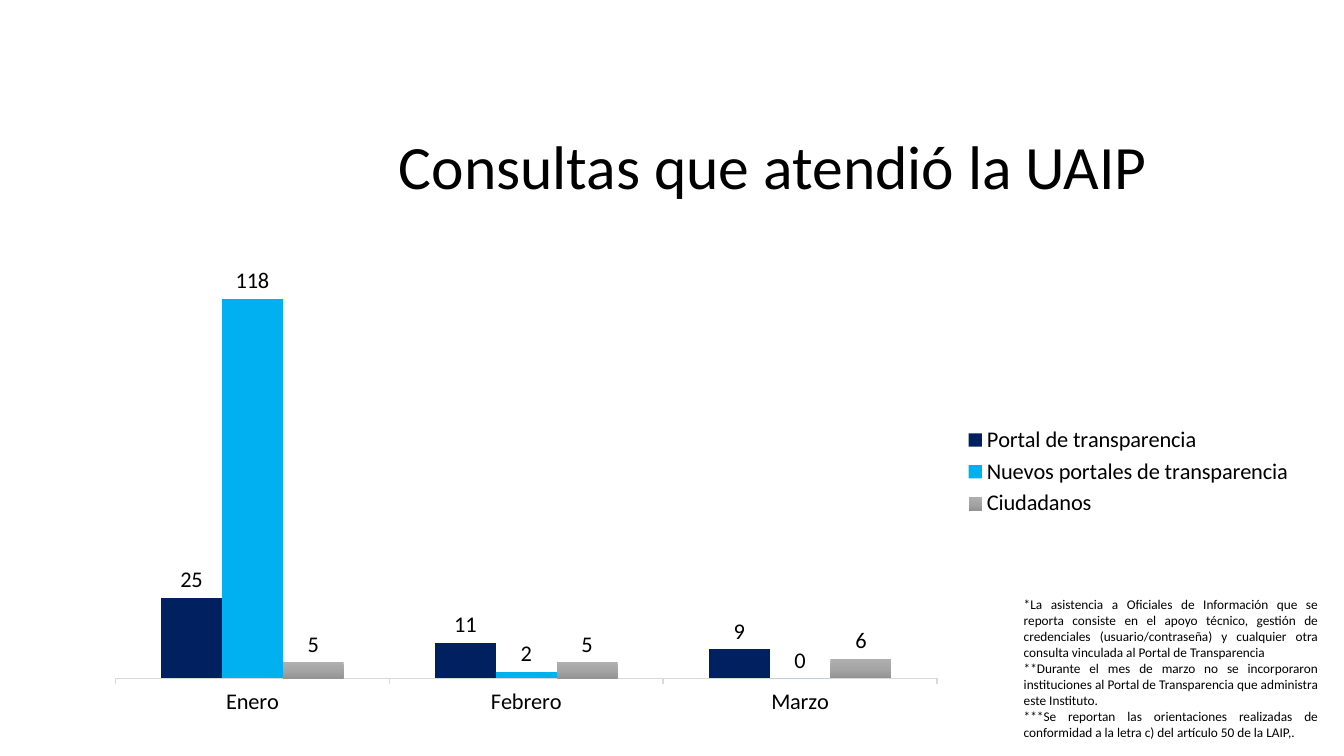
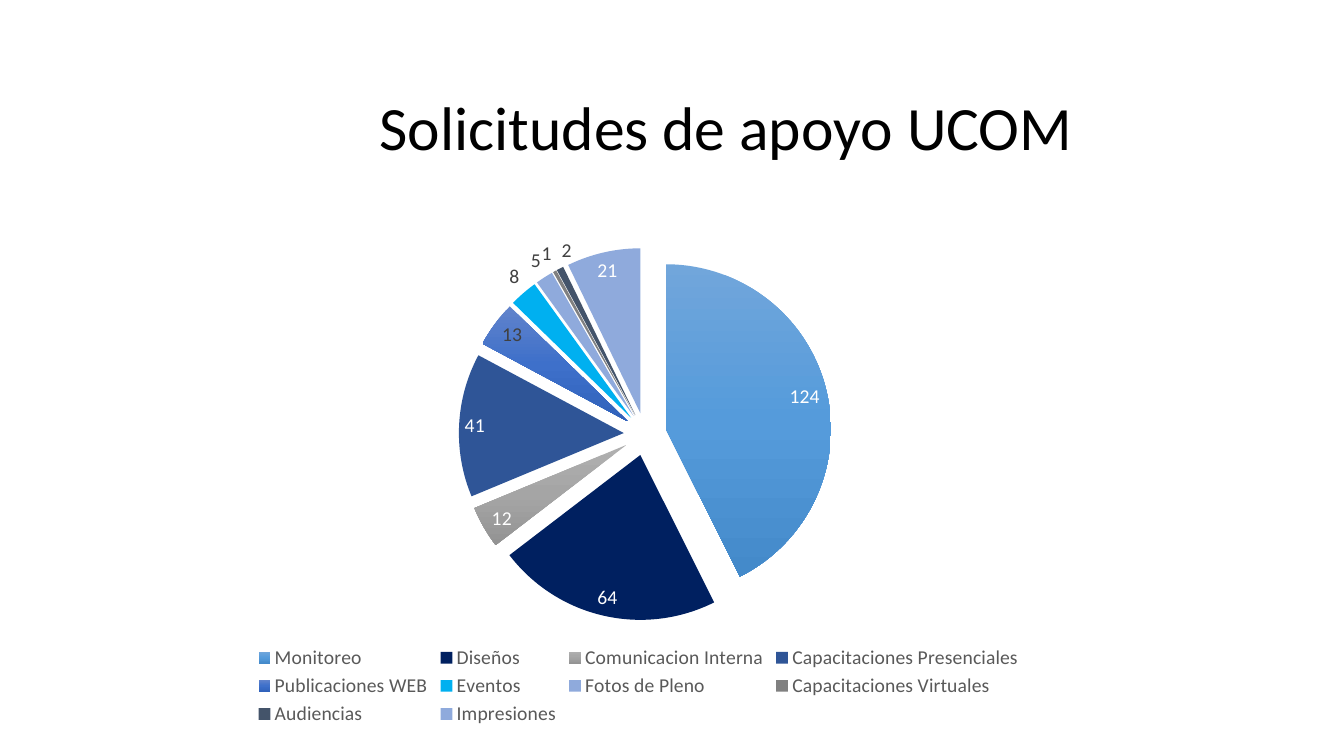
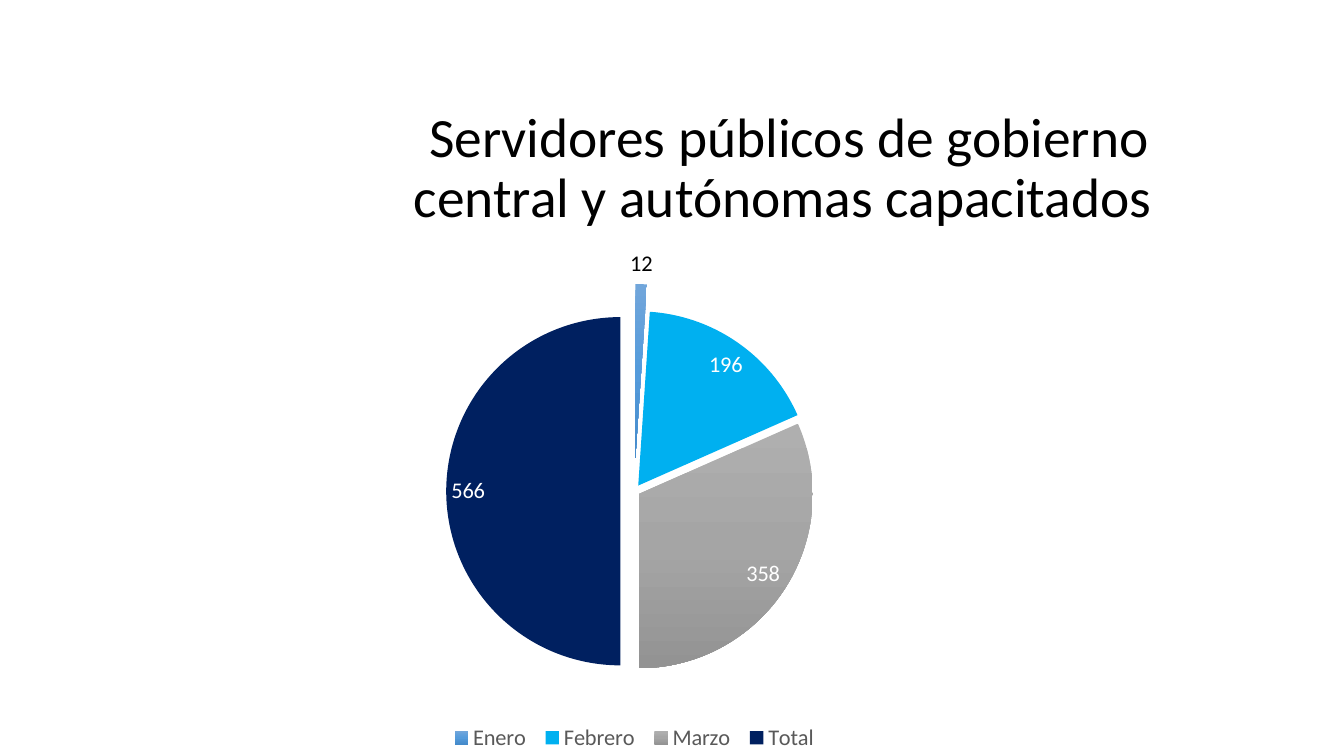
from lxml.etree import SubElement
from pptx import Presentation
from pptx.chart.data import CategoryChartData
from pptx.dml.color import RGBColor
from pptx.enum.chart import XL_CHART_TYPE, XL_LABEL_POSITION, XL_LEGEND_POSITION, XL_TICK_MARK
from pptx.enum.text import MSO_ANCHOR, PP_ALIGN
from pptx.oxml.ns import qn
from pptx.util import Cm, Pt

FONT = "Calibri"
BLACK = RGBColor(0x00, 0x00, 0x00)
WHITE = RGBColor(0xFF, 0xFF, 0xFF)
DARK_GRAY = RGBColor(0x40, 0x40, 0x40)
TEXT_GRAY = RGBColor(0x59, 0x59, 0x59)
GRAY = RGBColor(0x80, 0x80, 0x80)
AXIS_GRAY = RGBColor(0xD9, 0xD9, 0xD9)
NAVY = RGBColor(0x00, 0x20, 0x60)
CYAN = RGBColor(0x00, 0xB0, 0xF0)
BLUE = RGBColor(0x2F, 0x55, 0x97)
LIGHT_BLUE = RGBColor(0x8F, 0xAA, 0xDC)
SLATE = RGBColor(0x44, 0x54, 0x6A)
SILVER_GRADIENT = (RGBColor(0xAF, 0xAF, 0xAF), RGBColor(0xA5, 0xA5, 0xA5), RGBColor(0x93, 0x93, 0x93))
SKY_GRADIENT = (RGBColor(0x71, 0xA6, 0xDB), RGBColor(0x55, 0x9B, 0xDB), RGBColor(0x44, 0x8A, 0xCA))
ROYAL_GRADIENT = (RGBColor(0x61, 0x83, 0xCB), RGBColor(0x3E, 0x70, 0xCA), RGBColor(0x30, 0x62, 0xBB))

NOTES = (
    "*La asistencia a Oficiales de Información que se reporta consiste en el apoyo técnico, "
    "gestión de credenciales (usuario/contraseña) y cualquier otra consulta vinculada al "
    "Portal de Transparencia",
    "**Durante el mes de marzo no se incorporaron instituciones al Portal de Transparencia "
    "que administra este Instituto.",
    "***Se reportan las orientaciones realizadas de conformidad a la letra c) del artículo 50 "
    "de la LAIP,.",
)
QUERIES = (
    ("Portal de transparencia", (25, 11, 9), NAVY),
    ("Nuevos portales de transparencia", (118, 2, 0), CYAN),
    ("Ciudadanos", (5, 5, 6), SILVER_GRADIENT),
)
REQUESTS = (
    ("Monitoreo", 124, SKY_GRADIENT),
    ("Diseños", 64, NAVY),
    ("Comunicacion Interna", 12, SILVER_GRADIENT),
    ("Capacitaciones Presenciales", 41, BLUE),
    ("Publicaciones WEB", 13, ROYAL_GRADIENT),
    ("Eventos", 8, CYAN),
    ("Fotos de Pleno", 5, LIGHT_BLUE),
    ("Capacitaciones Virtuales", 1, GRAY),
    ("Audiencias", 2, SLATE),
    ("Impresiones", 21, LIGHT_BLUE),
)
TRAINED = (
    ("Enero ", 12, SKY_GRADIENT),
    ("Febrero ", 196, CYAN),
    ("Marzo ", 358, SILVER_GRADIENT),
    ("Total", 566, NAVY),
)


def set_font(font, size, color):
    font.name = FONT
    font.size = Pt(size)
    font.color.rgb = color


def add_text(page, frame, paragraphs, size, color=BLACK, align=PP_ALIGN.LEFT,
             anchor=MSO_ANCHOR.TOP, line_spacing=1.0):
    box = page.shapes.add_textbox(*map(Cm, frame))
    box.text_frame.word_wrap = True
    box.text_frame.vertical_anchor = anchor
    for number, text in enumerate(paragraphs):
        para = box.text_frame.add_paragraph() if number else box.text_frame.paragraphs[0]
        para.alignment = align
        para.line_spacing = line_spacing
        span = para.add_run()
        span.text = text
        set_font(span.font, size, color)


def add_title(page, text, left=9.8, top=2.44, size=44, align=PP_ALIGN.LEFT):
    add_text(page, (left, top, 20.17, 3.68), [text], size, align=align,
             anchor=MSO_ANCHOR.MIDDLE, line_spacing=0.9)


def paint(target, color):
    fill = target.format.fill
    if isinstance(color, RGBColor):
        fill.solid()
        fill.fore_color.rgb = color
        return
    fill.gradient()
    fill.gradient_angle = 270
    stops = next(target.format._element.iter(qn("a:gsLst")))
    for stop in list(stops):
        stops.remove(stop)
    for position, shade in zip((0, 50000, 100000), color):
        stop = SubElement(stops, qn("a:gs"), pos=str(position))
        SubElement(stop, qn("a:srgbClr"), val=str(shade))


def add_chart(page, kind, frame, categories, series, size, legend_position, legend_color):
    data = CategoryChartData()
    data.categories = categories
    for name, values in series:
        data.add_series(name, values)
    chart = page.shapes.add_chart(kind, *map(Cm, frame), data).chart
    chart.has_title = False
    set_font(chart.font, size, BLACK)
    chart.has_legend = True
    chart.legend.position = legend_position
    chart.legend.include_in_layout = False
    set_font(chart.legend.font, size, legend_color)
    return chart


def add_labels(series, size, color, position):
    labels = series.data_labels
    labels.show_value = True
    labels.position = position
    set_font(labels.font, size, color)


def add_columns(page, frame, categories, rows, size):
    chart = add_chart(page, XL_CHART_TYPE.COLUMN_CLUSTERED, frame, categories,
                      [(name, values) for name, values, color in rows],
                      size, XL_LEGEND_POSITION.RIGHT, BLACK)
    plot = chart.plots[0]
    plot.vary_by_categories = False
    plot.gap_width = 150
    plot.overlap = 0
    chart.value_axis.visible = False
    chart.value_axis.has_major_gridlines = False
    axis = chart.category_axis
    axis.major_tick_mark = XL_TICK_MARK.OUTSIDE
    axis.format.line.color.rgb = AXIS_GRAY
    axis.format.line.width = Pt(1)
    set_font(axis.tick_labels.font, size, BLACK)
    for series, (name, values, color) in zip(plot.series, rows):
        series.invert_if_negative = False
        paint(series, color)
        add_labels(series, size, BLACK, XL_LABEL_POSITION.OUTSIDE_END)


def explode(next_element, percent):
    explosion = next_element.makeelement(qn("c:explosion"), {"val": str(percent)})
    next_element.addprevious(explosion)


def add_pie(page, frame, slices, size, explosion, label_color, special_labels,
            special_color, slice_explosions=()):
    chart = add_chart(page, XL_CHART_TYPE.PIE, frame, [name for name, value, color in slices],
                      [("Series 1", [value for name, value, color in slices])],
                      size, XL_LEGEND_POSITION.BOTTOM, TEXT_GRAY)
    plot = chart.plots[0]
    plot.vary_by_categories = True
    series = plot.series[0]
    for number, (name, value, color) in enumerate(slices):
        paint(series.points[number], color)
    points = series._element.findall(qn("c:dPt"))
    explode(points[0], explosion)
    for point, percent in zip(points, slice_explosions):
        explode(point.find(qn("c:spPr")), percent)
    add_labels(series, size, label_color, XL_LABEL_POSITION.BEST_FIT)
    for number in special_labels:
        label = series.points[number].data_label
        set_font(label.font, size, special_color)
        label.position = XL_LABEL_POSITION.BEST_FIT


def main():
    deck = Presentation()
    deck.slide_width = Cm(33.87)
    deck.slide_height = Cm(19.05)
    queries, requests, trained = [deck.slides.add_slide(deck.slide_layouts[6]) for _ in range(3)]

    add_text(queries, (25.55, 14.9, 7.92, 3.9), NOTES, 9.5, align=PP_ALIGN.JUSTIFY)
    add_columns(queries, (2.3, 5.49, 30.56, 12.8), ("Enero", "Febrero", "Marzo"), QUERIES, 16)
    add_title(queries, "Consultas que atendió la UAIP")

    add_title(requests, "Solicitudes de apoyo UCOM", left=9.32, top=1.45)
    add_pie(requests, (0.8, 5.4, 30.58, 13), REQUESTS, 14, 13, DARK_GRAY, (0, 1, 2, 3, 9), WHITE)

    add_title(trained, "Servidores públicos de gobierno central y autónomas capacitados ",
              size=39.6, align=PP_ALIGN.CENTER)
    add_pie(trained, (2, 5.97, 27.97, 13.08), TRAINED, 16, 10, WHITE, (0,), BLACK, (19, 4, 3, 8))

    deck.save("out.pptx")


if __name__ == "__main__":
    main()
